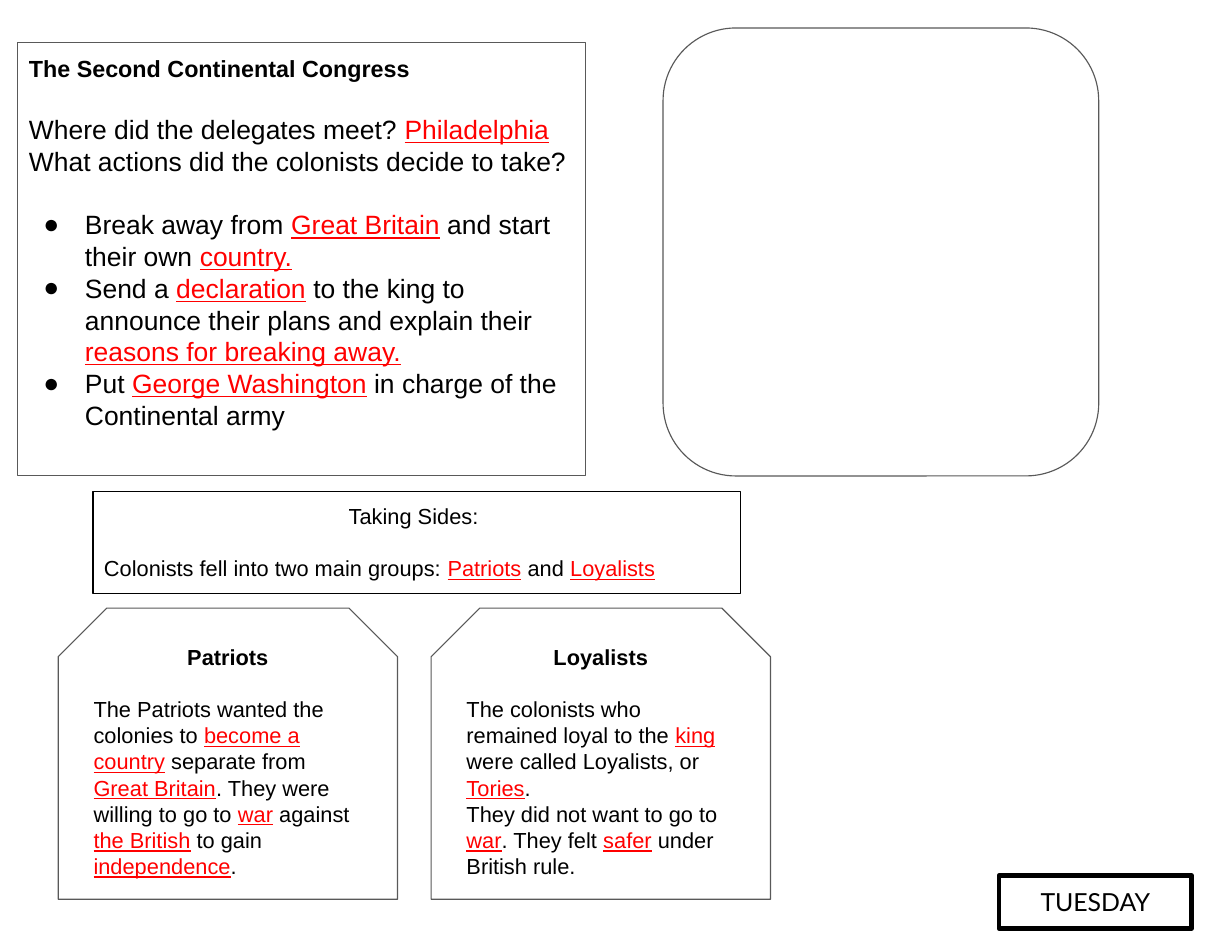
"""Build the Tuesday slide on the Second Continental Congress and the two sides."""
import pptx
import pptx.dml.color
import pptx.enum.shapes
import pptx.enum.text
import pptx.oxml
import pptx.oxml.ns
import pptx.util

Inches = pptx.util.Inches
Pt = pptx.util.Pt
RGBColor = pptx.dml.color.RGBColor
SHAPES = pptx.enum.shapes.MSO_SHAPE
ALIGN = pptx.enum.text.PP_ALIGN

BLACK = RGBColor(0x00, 0x00, 0x00)
GRAY = RGBColor(0x59, 0x59, 0x59)
RED = RGBColor(0xFF, 0x00, 0x00)
WHITE = RGBColor(0xFF, 0xFF, 0xFF)

LINE_FACTOR = 1.2
CORNER = 0.167

STYLES = {
    "heading": {"size": 15, "bold": True},
    "question": {"size": 17},
    "spaced question": {"size": 17, "gap": True},
    "bullet": {"size": 17, "bullet": True},
    "spaced bullet": {"size": 17, "bullet": True, "gap": True},
    "title": {"size": 14, "bold": True, "align": ALIGN.CENTER},
    "topic": {"size": 14, "align": ALIGN.CENTER},
    "body": {"size": 14},
    "spaced body": {"size": 14, "gap": True},
    "day": {"size": 16, "font": "Lato", "align": ALIGN.CENTER},
}

presentation = pptx.Presentation()
presentation.slide_width = Inches(11)
presentation.slide_height = Inches(8.5)
slide = presentation.slides.add_slide(presentation.slide_layouts[6])


def add_box(kind, position, line_color, line_width=0.75, fill=None):
    shape = slide.shapes.add_shape(kind, *[Inches(length) for length in position])
    shape.shadow.inherit = False
    if fill is None:
        shape.fill.background()
    else:
        shape.fill.solid()
        shape.fill.fore_color.rgb = fill
    shape.line.color.rgb = line_color
    shape.line.width = Pt(line_width)
    frame_format = {
        "margin_left": Inches(0.1),
        "margin_top": Inches(0.1),
        "margin_right": Inches(0.1),
        "margin_bottom": Inches(0.1),
        "word_wrap": True,
        "vertical_anchor": pptx.enum.text.MSO_ANCHOR.TOP,
    }
    for name, value in frame_format.items():
        setattr(shape.text_frame, name, value)
    return shape


def write_text(shape, lines):
    """Write styled lines; words between asterisks are underlined answers."""
    for index, (style_name, text) in enumerate(lines):
        style = STYLES[style_name]
        frame = shape.text_frame
        paragraph = frame.add_paragraph() if index else frame.paragraphs[0]
        line_height = Pt(style["size"] * LINE_FACTOR)
        paragraph_format = {
            "alignment": style.get("align", ALIGN.LEFT),
            "line_spacing": line_height,
            "space_before": line_height if style.get("gap") else Pt(0),
        }
        for name, value in paragraph_format.items():
            setattr(paragraph, name, value)
        if style.get("bullet"):
            properties = paragraph._p.get_or_add_pPr()
            properties.set("marL", str(Inches(0.5)))
            properties.set("indent", str(Inches(-0.37)))
            namespace = pptx.oxml.ns.nsdecls("a")
            for markup in (
                f'<a:buClr {namespace}><a:srgbClr val="{BLACK}"/></a:buClr>',
                f'<a:buFont {namespace} typeface="Arial"/>',
                f'<a:buChar {namespace} char="●"/>',
            ):
                properties.append(pptx.oxml.parse_xml(markup))
        for part_index, part in enumerate(text.split("*")):
            if not part:
                continue
            is_answer = part_index % 2 == 1
            run = paragraph.add_run()
            run.text = part
            font_format = {
                "name": style.get("font", "Arial"),
                "size": Pt(style["size"]),
                "bold": style.get("bold", False),
                "underline": is_answer,
            }
            for name, value in font_format.items():
                setattr(run.font, name, value)
            run.font.color.rgb = RED if is_answer else BLACK


congress_box = add_box(SHAPES.RECTANGLE, (0.16, 0.38, 5.07, 3.87), GRAY)
write_text(congress_box, [
    ("heading", "The Second Continental Congress"),
    ("spaced question", "Where did the delegates meet? *Philadelphia*"),
    ("question", "What actions did the colonists decide to take?"),
    ("spaced bullet", "Break away from *Great Britain* and start their own *country.*"),
    ("bullet", "Send a *declaration* to the king to announce their plans "
               "and explain their *reasons for breaking away.*"),
    ("bullet", "Put *George Washington* in charge of the Continental army"),
])

day_box = add_box(SHAPES.RECTANGLE, (8.92, 7.82, 1.72, 0.47), BLACK, 3)
write_text(day_box, [("day", "TUESDAY")])

sides = [
    [
        ("title", "Patriots"),
        ("spaced body", "The Patriots wanted the colonies to *become a country* separate "
                        "from *Great Britain*. They were willing to go to *war* against "
                        "*the British* to gain *independence*."),
    ],
    [
        ("title", "Loyalists"),
        ("spaced body", "The colonists who remained loyal to the *king* were called "
                        "Loyalists, or *Tories*."),
        ("body", "They did not want to go to *war*. They felt *safer* under British rule."),
    ],
]
for column, lines in enumerate(sides):
    side_box = add_box(SHAPES.SNIP_2_SAME_RECTANGLE,
                       (0.52 + 3.33 * column, 5.43, 3.03, 2.6), GRAY, fill=WHITE)
    side_box.adjustments[0] = CORNER
    side_box.adjustments[1] = 0
    write_text(side_box, lines)

topic_box = add_box(SHAPES.RECTANGLE, (0.83, 4.39, 5.78, 0.91), BLACK)
write_text(topic_box, [
    ("topic", "Taking Sides: "),
    ("spaced body", "Colonists fell into two main groups: *Patriots* and *Loyalists*"),
])

drawing_box = add_box(SHAPES.ROUNDED_RECTANGLE, (5.92, 0.25, 3.89, 4), GRAY, fill=WHITE)
drawing_box.adjustments[0] = CORNER

presentation.save("out.pptx")
